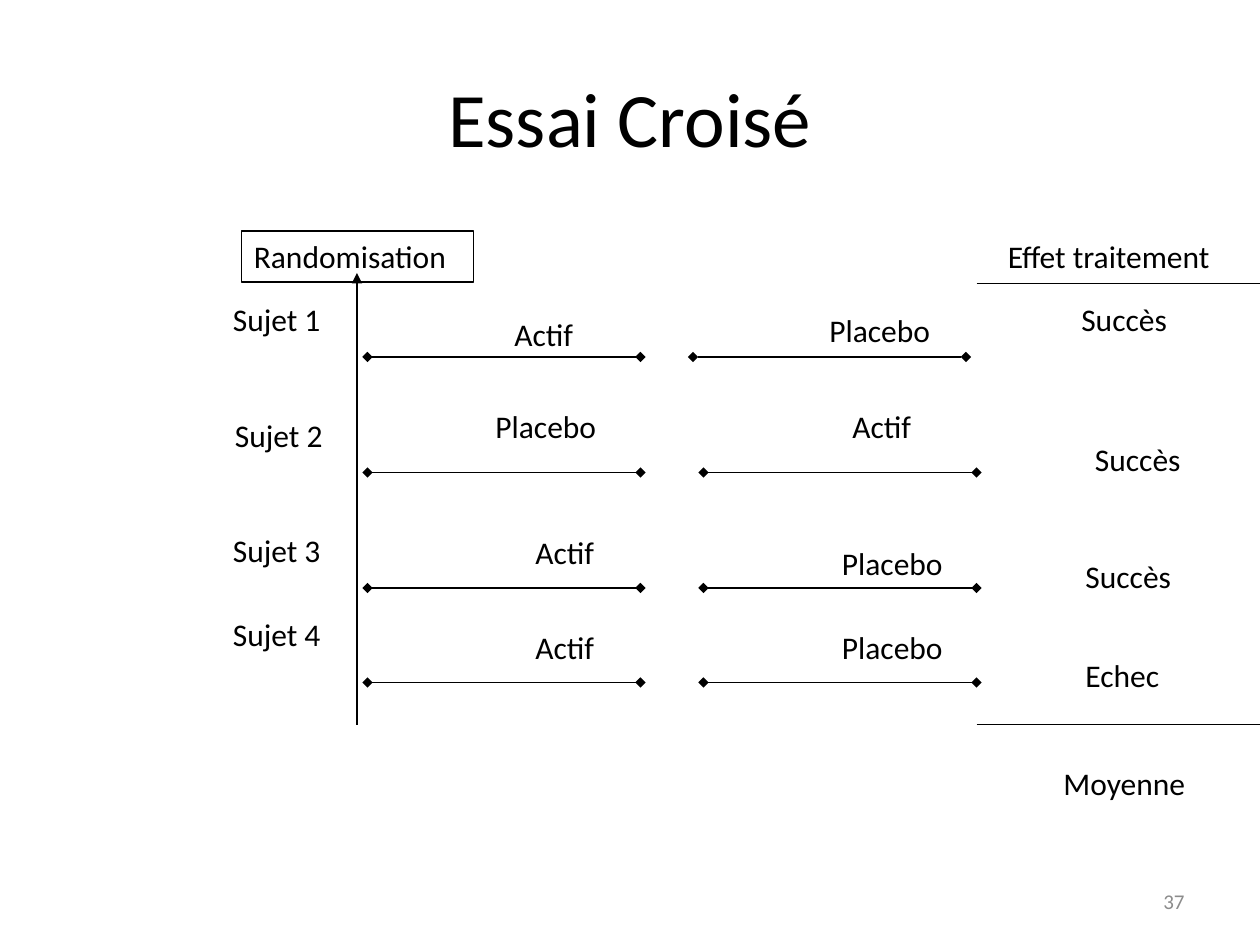
import pptx
import pptx.util
import pptx.dml.color
import pptx.enum.shapes
import pptx.enum.text
import pptx.oxml.xmlchemy

BLACK = pptx.dml.color.RGBColor(0x00, 0x00, 0x00)
GREY = pptx.dml.color.RGBColor(0x8C, 0x8C, 0x8C)
FONT = "Calibri"

deck = pptx.Presentation()
deck.slide_width = pptx.util.Inches(10)
deck.slide_height = pptx.util.Inches(7.5)
COLUMN = deck.slide_width / 120
ROW = deck.slide_height / 90
slide = deck.slides.add_slide(deck.slide_layouts[5])


def add_label(words, column, row, columns, size=18, color=BLACK, wrap=False):
    label = slide.shapes.add_textbox(
        round(column * COLUMN), round(row * ROW), round(columns * COLUMN), round(4.85 * ROW))
    label.text_frame.word_wrap = wrap
    label.text_frame.text = words
    paragraph = label.text_frame.paragraphs[0]
    paragraph.font.name = FONT
    paragraph.font.size = pptx.util.Pt(size)
    paragraph.font.color.rgb = color
    return label


def add_line(start_column, start_row, end_column, end_row, head=None, tail=None):
    line = slide.shapes.add_connector(
        pptx.enum.shapes.MSO_CONNECTOR.STRAIGHT,
        round(start_column * COLUMN), round(start_row * ROW),
        round(end_column * COLUMN), round(end_row * ROW))
    line.line.color.rgb = BLACK
    line.line.width = pptx.util.Pt(0.75)
    for tag, kind in (("a:headEnd", head), ("a:tailEnd", tail)):
        if kind:
            end = pptx.oxml.xmlchemy.OxmlElement(tag)
            end.set("type", kind)
            line.get_or_add_ln().append(end)
    line._element.spPr.append(pptx.oxml.xmlchemy.OxmlElement("a:effectLst"))


title = slide.shapes.title
title.left, title.top = round(6 * COLUMN), round(3.6 * ROW)
title.width, title.height = round(108 * COLUMN), round(15 * ROW)
title.text_frame.text = "Essai Croisé"
title.text_frame.vertical_anchor = pptx.enum.text.MSO_ANCHOR.MIDDLE
heading = title.text_frame.paragraphs[0]
heading.alignment = pptx.enum.text.PP_ALIGN.CENTER
heading.font.name = FONT
heading.font.size = pptx.util.Pt(44)
heading.font.color.rgb = BLACK

PERIOD = 26
for row, second_start in ((34, 66), (45, 67), (56, 67), (65, 67)):
    for start in (35, second_start):
        add_line(start, row, start + PERIOD, row, "diamond", "diamond")

WIDTHS = {"Sujet": 11.8, "Actif": 8.3, "Placebo": 12.6, "Succès": 10.7, "Echec": 9.5}
subjects = [
    [("Sujet 1", 21, 28), ("Actif", 47.8, 29.4), ("Placebo", 77.8, 29), ("Succès", 101.8, 28)],
    [("Sujet 2", 21.2, 39), ("Placebo", 46, 38.2), ("Actif", 80, 38.2), ("Succès", 103.1, 41.3)],
    [("Sujet 3", 21, 50), ("Actif", 49.8, 50.2), ("Placebo", 79, 51.2), ("Succès", 102.2, 52.5)],
    [("Sujet 4", 21, 58), ("Actif", 49.8, 59.2), ("Placebo", 79, 59.2), ("Echec", 102.2, 61.9)],
]
for subject in subjects:
    for words, column, row in subject:
        add_label(words, column, row, WIDTHS[words.split()[0]])

randomisation = add_label("Randomisation", 23, 22, 22.1)
randomisation.line.color.rgb = BLACK
randomisation.line.width = pptx.util.Pt(0.75)
add_line(34, 69, 34, 26, tail="triangle")

add_label("Effet traitement", 94.8, 22, 23.3)
for row in (27, 69):
    add_line(93, row, 120, row)
add_label("Moyenne", 100.1, 72.2, 14.4)

page_number = add_label("37", 86, 83.4, 28, 12, GREY, True)
page_number.text_frame.vertical_anchor = pptx.enum.text.MSO_ANCHOR.MIDDLE
page_number.text_frame.paragraphs[0].alignment = pptx.enum.text.PP_ALIGN.RIGHT

deck.save("out.pptx")
